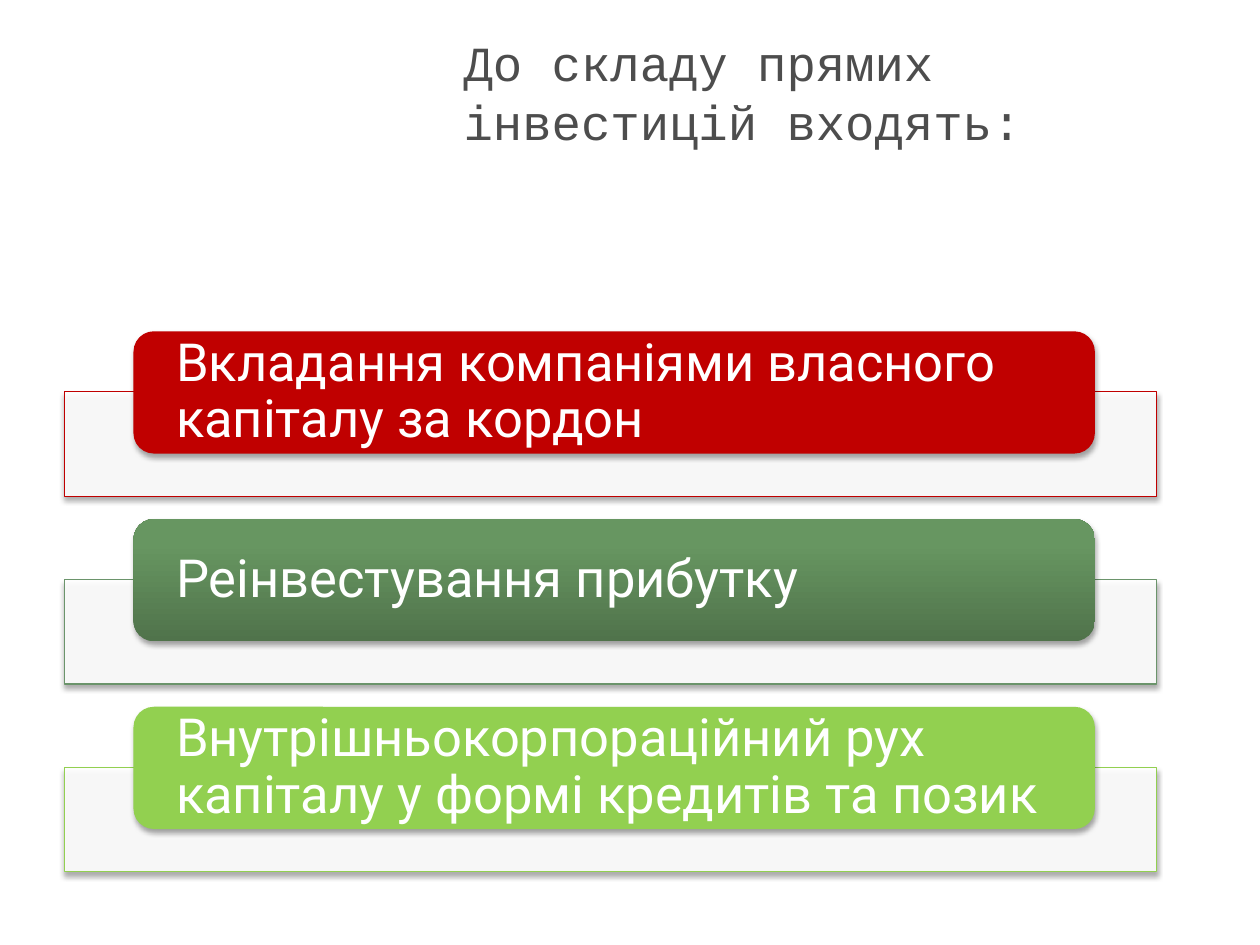
from dataclasses import dataclass

from lxml import etree
from pptx import Presentation
from pptx.dml.color import RGBColor
from pptx.enum import shapes, text
from pptx.oxml import ns
from pptx.util import Inches, Pt


@dataclass(frozen=True)
class Theme:
    title_font: str = "Courier New"
    body_font: str = "Roboto"
    title_size: int = 28
    body_size: int = 30
    title: str = "4D4D4D"
    white: str = "FFFFFF"
    red: str = "C00000"
    green: str = "6B946B"
    green_dark: str = "50734B"
    green_light: str = "679661"
    lime: str = "92D050"


@dataclass(frozen=True)
class Item:
    label: str
    line: str
    fill: tuple[str, ...]  # one colour, or bottom and top of a gradient


THEME = Theme()
ITEMS = (
    Item("Вкладання компаніями власного капіталу за кордон", THEME.red, (THEME.red,)),
    Item("Реінвестування прибутку", THEME.green, (THEME.green_dark, THEME.green_light)),
    Item("Внутрішньокорпораційний рух капіталу у формі кредитів та позик",
         THEME.lime, (THEME.lime,)),
)
FIRST_TOP = 2.63
PITCH = 1.49
PANEL_OFFSET = 0.48


def rgb(value: str) -> RGBColor:
    return RGBColor.from_string(value)


def set_alpha(color, percent: int) -> None:
    etree.SubElement(color, ns.qn("a:alpha"), val=str(percent * 1000))


def add_shadow(shape) -> None:
    """Give the shape a soft shadow that falls straight down."""
    shape.shadow.inherit = False
    effects = shape._element.spPr.find(ns.qn("a:effectLst"))
    shadow = etree.SubElement(
        effects, ns.qn("a:outerShdw"), blurRad=str(Pt(3.1)), dist=str(Pt(1.8)),
        dir="5400000", rotWithShape="0")
    set_alpha(etree.SubElement(shadow, ns.qn("a:srgbClr"), val="000000"), 35)


def add_title(slide) -> None:
    title = slide.shapes.title
    title.left, title.top = Inches(3.58), Inches(0.29)
    title.width, title.height = Inches(6.14), Inches(0.87)
    frame = title.text_frame
    frame.text = "До складу прямих інвестицій входять:"
    frame.word_wrap = True
    frame.auto_size = text.MSO_AUTO_SIZE.NONE
    frame.vertical_anchor = text.MSO_ANCHOR.MIDDLE
    paragraph = frame.paragraphs[0]
    paragraph.alignment = text.PP_ALIGN.LEFT
    paragraph.font.name = THEME.title_font
    paragraph.font.size = Pt(THEME.title_size)
    paragraph.font.color.rgb = rgb(THEME.title)


def add_panel(slide, top: float, line: str) -> None:
    panel = slide.shapes.add_shape(
        shapes.MSO_SHAPE.RECTANGLE, Inches(0.51), Inches(top), Inches(8.67), Inches(0.83))
    panel.fill.solid()
    panel.fill.fore_color.rgb = rgb(THEME.white)
    set_alpha(panel._element.spPr.find(".//" + ns.qn("a:srgbClr")), 90)
    panel.line.color.rgb = rgb(line)
    panel.line.width = Pt(0.75)
    add_shadow(panel)


def fill_pill(pill, colors: tuple[str, ...]) -> None:
    if len(colors) == 1:
        pill.fill.solid()
        pill.fill.fore_color.rgb = rgb(colors[0])
        return
    pill.fill.gradient()
    pill.fill.gradient_angle = 90
    for stop, color, position in zip(pill.fill.gradient_stops, colors, (0, 0.8)):
        stop.color.rgb = rgb(color)
        stop.position = position


def add_pill(slide, top: float, item: Item) -> None:
    pill = slide.shapes.add_shape(
        shapes.MSO_SHAPE.ROUNDED_RECTANGLE,
        Inches(1.06), Inches(top), Inches(7.63), Inches(0.97))
    fill_pill(pill, item.fill)
    pill.line.fill.background()
    add_shadow(pill)
    frame = pill.text_frame
    frame.text = item.label
    frame.word_wrap = True
    frame.vertical_anchor = text.MSO_ANCHOR.MIDDLE
    frame.margin_left = frame.margin_right = Inches(0.29)
    frame.margin_top = frame.margin_bottom = 0
    paragraph = frame.paragraphs[0]
    paragraph.alignment = text.PP_ALIGN.LEFT
    paragraph.line_spacing = 0.9
    paragraph.font.name = THEME.body_font
    paragraph.font.size = Pt(THEME.body_size)
    paragraph.font.color.rgb = rgb(THEME.white)


def main() -> None:
    presentation = Presentation()
    presentation.slide_width, presentation.slide_height = Inches(10), Inches(7.5)
    slide = presentation.slides.add_slide(presentation.slide_layouts.get_by_name("Title Only"))
    add_title(slide)
    for index, item in enumerate(ITEMS):
        top = FIRST_TOP + index * PITCH
        add_panel(slide, top + PANEL_OFFSET, item.line)
        add_pill(slide, top, item)
    presentation.save("out.pptx")


if __name__ == "__main__":
    main()
